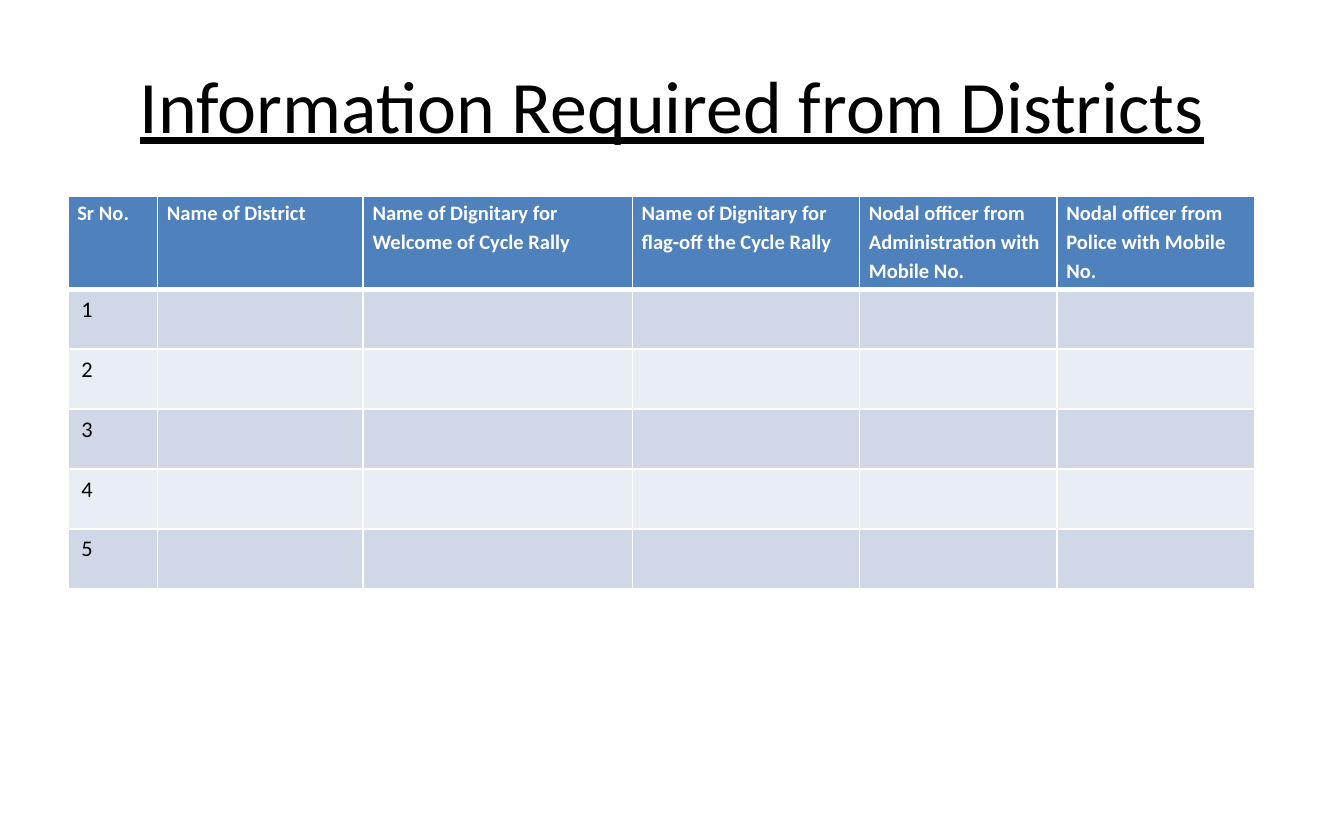
from dataclasses import dataclass

from lxml import etree
from pptx import Presentation
from pptx.dml.color import RGBColor
from pptx.enum.text import MSO_ANCHOR, PP_ALIGN
from pptx.oxml.ns import qn
from pptx.slide import Slide
from pptx.table import _Cell
from pptx.text.text import TextFrame
from pptx.util import Pt

CENTER = PP_ALIGN.CENTER
LEFT = PP_ALIGN.LEFT
MIDDLE = MSO_ANCHOR.MIDDLE

FONT = "Calibri"
COLORS = {
    "text": "000000",
    "white": "FFFFFF",
    "header": "4F81BD",
    "odd_row": "D0D8E8",
    "even_row": "E9EDF4",
}
HEADER_HEIGHT = 49.7
ROW_HEIGHT = 32.1
ROW_COUNT = 5
THIN_BORDER = 1
HEADER_BORDER = 3


@dataclass(frozen=True)
class Column:
    heading: str
    width: float


COLUMNS = [
    Column("Sr No.", 48),
    Column("Name of District", 110.2),
    Column("Name of Dignitary for Welcome of Cycle Rally", 144.2),
    Column("Name of Dignitary for flag-off the Cycle Rally", 121.7),
    Column("Nodal officer from Administration with Mobile No.", 105.8),
    Column("Nodal officer from Police with Mobile No.", 105.8),
]


def write_text(frame: TextFrame, text: str, *, size: float, color: str,
               bold: bool = False, underline: bool = False,
               alignment: PP_ALIGN = LEFT, line_spacing: float = 1.0) -> None:
    frame.word_wrap = True
    paragraph = frame.paragraphs[0]
    paragraph.alignment = alignment
    paragraph.line_spacing = line_spacing
    run = paragraph.add_run()
    run.text = text
    run.font.name = FONT
    run.font.size = Pt(size)
    run.font.bold = bold
    run.font.underline = underline
    run.font.color.rgb = RGBColor.from_string(COLORS[color])


def style_cell(cell: _Cell, fill: str, top: float, bottom: float) -> None:
    properties = cell._tc.get_or_add_tcPr()
    widths = {"lnL": THIN_BORDER, "lnR": THIN_BORDER, "lnT": top, "lnB": bottom}
    for tag, width in widths.items():
        line = etree.SubElement(properties, qn(f"a:{tag}"), w=str(Pt(width)))
        solid = etree.SubElement(line, qn("a:solidFill"))
        etree.SubElement(solid, qn("a:srgbClr"), val=COLORS["white"])
    cell.fill.solid()
    cell.fill.fore_color.rgb = RGBColor.from_string(COLORS[fill])


def add_title(slide: Slide) -> None:
    title = slide.shapes.add_textbox(Pt(36), Pt(18), Pt(648), Pt(75))
    title.text_frame.vertical_anchor = MIDDLE
    write_text(title.text_frame, "Information Required from Districts",
               size=39.6, color="text", underline=True, alignment=CENTER)


def add_district_table(slide: Slide) -> None:
    width = sum(column.width for column in COLUMNS)
    height = HEADER_HEIGHT + ROW_COUNT * ROW_HEIGHT
    table = slide.shapes.add_table(ROW_COUNT + 1, len(COLUMNS), Pt(36.4), Pt(105.3),
                                   Pt(width), Pt(height)).table
    table.rows[0].height = Pt(HEADER_HEIGHT)
    for index, column in enumerate(COLUMNS):
        table.columns[index].width = Pt(column.width)
        cell = table.cell(0, index)
        cell.margin_left = cell.margin_right = Pt(5)
        cell.margin_top = cell.margin_bottom = Pt(0)
        style_cell(cell, "header", THIN_BORDER, HEADER_BORDER)
        write_text(cell.text_frame, column.heading, size=11, color="white",
                   bold=True, line_spacing=1.15)
    for number in range(1, ROW_COUNT + 1):
        table.rows[number].height = Pt(ROW_HEIGHT)
        fill = "odd_row" if number % 2 else "even_row"
        top = HEADER_BORDER if number == 1 else THIN_BORDER
        for index in range(len(COLUMNS)):
            style_cell(table.cell(number, index), fill, top, THIN_BORDER)
        write_text(table.cell(number, 0).text_frame, str(number), size=12, color="text")


def main() -> None:
    presentation = Presentation()
    presentation.slide_width = Pt(720)
    presentation.slide_height = Pt(450)
    slide = presentation.slides.add_slide(presentation.slide_layouts[6])
    add_title(slide)
    add_district_table(slide)
    presentation.save("out.pptx")


if __name__ == "__main__":
    main()
